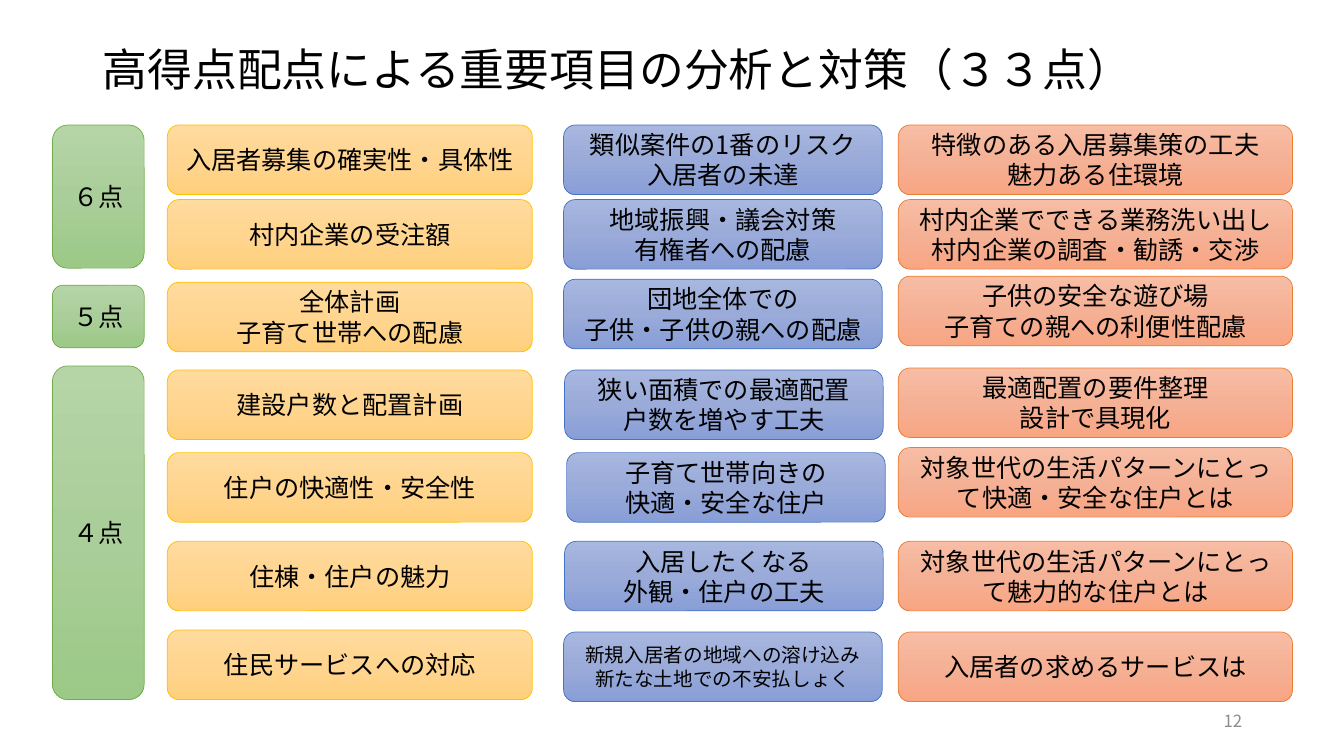
from copy import deepcopy
from dataclasses import dataclass

from lxml.etree import SubElement
from pptx import Presentation
from pptx.dml.color import RGBColor
from pptx.enum.shapes import MSO_SHAPE
from pptx.enum.text import MSO_ANCHOR, PP_ALIGN
from pptx.oxml.ns import qn
from pptx.util import Emu, Pt

EMU_PER_PX = 9144


@dataclass(frozen=True)
class Theme:
    """Hold the colours and type sizes of the slide."""

    face: str = "Noto Sans CJK JP"
    ink: str = "000000"
    muted: str = "8C8C8C"
    heading: int = 32
    body: int = 18
    small: int = 14
    footer: int = 12
    outline: float = 0.5
    green: tuple = ("70AD47", "B5D5A7", "AACE9A", "9CC987")
    yellow: tuple = ("FFC000", "FFDB9E", "FFD590", "FFD07C")
    blue: tuple = ("4472C4", "A8B7DF", "9AABD9", "889ED7")
    orange: tuple = ("ED7D31", "F7BDA5", "F5B196", "F8A582")


THEME = Theme()
CARD_HEIGHT = 69

SCORES = [
    (124, 142, "６点"),
    (283, 62, "５点"),
    (363, 331, "４点"),
]
ITEMS = [
    (166, 124, "入居者募集の確実性・具体性"),
    (166, 198, "村内企業の受注額"),
    (166, 280, "全体計画\n子育て世帯への配慮"),
    (166, 367, "建設戸数と配置計画"),
    (166, 449, "住戸の快適性・安全性"),
    (166, 537, "住棟・住戸の魅力"),
    (166, 625, "住民サービスへの対応"),
]
ANALYSES = [
    (559, 124, "類似案件の1番のリスク\n入居者の未達"),
    (559, 198, "地域振興・議会対策\n有権者への配慮"),
    (559, 277, "団地全体での\n子供・子供の親への配慮"),
    (560, 367, "狭い面積での最適配置\n戸数を増やす工夫"),
    (562, 449, "子育て世帯向きの\n快適・安全な住戸"),
    (560, 537, "入居したくなる\n外観・住戸の工夫"),
]
RISK_OF_MOVING = [(559, 627, "新規入居者の地域への溶け込み\n新たな土地での不安払しょく")]
MEASURES = [
    (891, 124, "特徴のある入居募集策の工夫\n魅力ある住環境"),
    (891, 198, "村内企業でできる業務洗い出し\n村内企業の調査・勧誘・交渉"),
    (891, 274, "子供の安全な遊び場\n子育ての親への利便性配慮"),
    (891, 365, "最適配置の要件整理\n設計で具現化"),
    (891, 444, "対象世代の生活パターンにとって快適・安全な住戸とは"),
    (891, 537, "対象世代の生活パターンにとって魅力的な住戸とは"),
    (891, 627, "入居者の求めるサービスは"),
]


def px(*lengths):
    """Turn pixel lengths into EMU."""
    return [Emu(length * EMU_PER_PX) for length in lengths]


def apply_format(target, values):
    """Set each named format value on the target."""
    for name, value in values.items():
        setattr(target, name, value)


def write_text(holder, text, size, ink=THEME.ink, **paragraph_format):
    """Fill a shape with one styled paragraph per line of text."""
    frame = holder.text_frame
    apply_format(frame, {"word_wrap": True, "vertical_anchor": MSO_ANCHOR.MIDDLE, "text": text})
    for paragraph in frame.paragraphs:
        apply_format(paragraph, paragraph_format)
        for run in paragraph.runs:
            apply_format(run.font, {"name": THEME.face, "size": Pt(size)})
            run.font.color.rgb = RGBColor.from_string(ink)
    for properties in holder.element.iter(qn("a:rPr")):
        SubElement(properties, qn("a:ea"), typeface=THEME.face)


def add_label(slide, box, text, size, **text_format):
    """Add a plain line of text."""
    write_text(slide.shapes.add_textbox(*px(*box)), text, size, **text_format)


def paint_gradient(fill, gradient_list, shades):
    """Paint evenly spaced shades from top to bottom."""
    for _ in shades[2:]:
        gradient_list.append(deepcopy(gradient_list[0]))
    fill.gradient_angle = 270
    for index, (stop, shade) in enumerate(zip(fill.gradient_stops, shades)):
        stop.position = index / (len(shades) - 1)
        stop.color.rgb = RGBColor.from_string(shade)


def add_card(slide, box, text, palette, size=THEME.body):
    """Add a rounded gradient card with centred text."""
    card = slide.shapes.add_shape(MSO_SHAPE.ROUNDED_RECTANGLE, *px(*box))
    card.shadow.inherit = False
    outline, *shades = palette
    card.fill.gradient()
    paint_gradient(card.fill, card.element.spPr.find(".//" + qn("a:gsLst")), shades)
    card.line.color.rgb = RGBColor.from_string(outline)
    card.line.width = Pt(THEME.outline)
    write_text(card, text, size, alignment=PP_ALIGN.CENTER)


def add_column(slide, cards, width, palette, size=THEME.body):
    """Add a column of cards of equal size."""
    for left, top, text in cards:
        add_card(slide, (left, top, width, CARD_HEIGHT), text, palette, size)


def main():
    """Build the slide and save it."""
    deck = Presentation()
    deck.slide_width, deck.slide_height = px(1333, 750)
    slide = deck.slides.add_slide(deck.slide_layouts[6])
    add_label(slide, (92, 40, 1150, 62), "高得点配点による重要項目の分析と対策（３３点）",
              THEME.heading, line_spacing=0.9)
    for top, height, score in SCORES:
        add_card(slide, (52, top, 91, height), score, THEME.green)
    add_column(slide, ITEMS, 362, THEME.yellow)
    add_column(slide, ANALYSES, 316, THEME.blue)
    add_column(slide, RISK_OF_MOVING, 316, THEME.blue, THEME.small)
    add_column(slide, MEASURES, 391, THEME.orange)
    add_label(slide, (942, 695, 300, 40), "12", THEME.footer,
              ink=THEME.muted, alignment=PP_ALIGN.RIGHT)
    deck.save("out.pptx")


if __name__ == "__main__":
    main()
